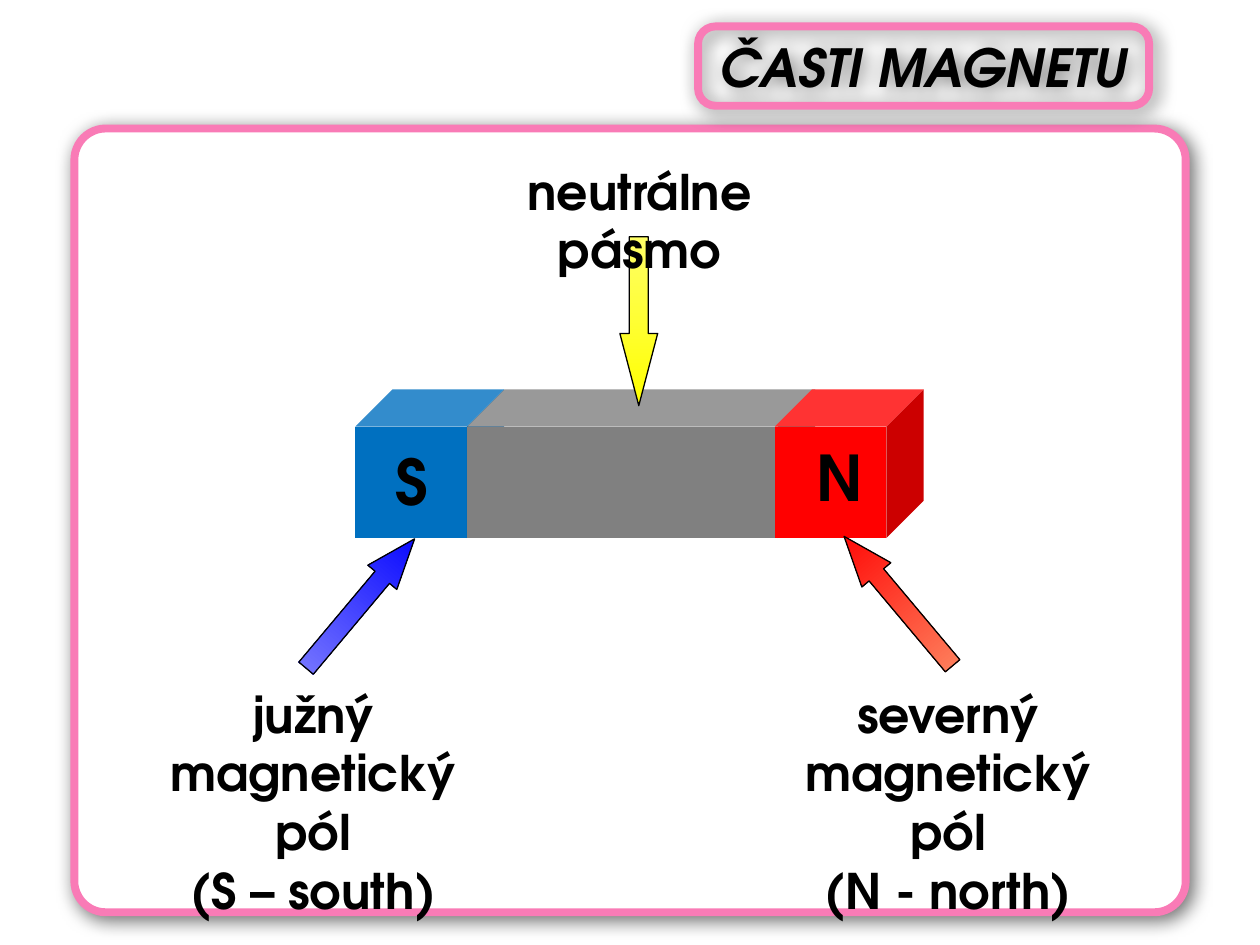
from lxml import etree
from pptx import Presentation
from pptx.dml.color import RGBColor
from pptx.enum.shapes import MSO_SHAPE
from pptx.enum.text import MSO_ANCHOR, MSO_AUTO_SIZE, PP_ALIGN
from pptx.oxml.ns import qn
from pptx.util import Inches, Pt

ROUNDED, CUBE, ARROW = MSO_SHAPE.ROUNDED_RECTANGLE, MSO_SHAPE.CUBE, MSO_SHAPE.UP_ARROW
CENTER, MIDDLE = PP_ALIGN.CENTER, MSO_ANCHOR.MIDDLE
GROW = MSO_AUTO_SIZE.SHAPE_TO_FIT_TEXT


def color(value):
    return RGBColor.from_string(value)


class MagnetSlide:
    """Draws the parts of the magnet on one slide in a shared style."""

    font = "TeX Gyre Adventor"
    ink = "000000"
    border = "F97BB6"

    def __init__(self, slide):
        self.slide = slide

    def shape(self, kind, box, adjustments=()):
        shape = self.slide.shapes.add_shape(kind, *map(Inches, box))
        shape.shadow.inherit = False
        for index, value in enumerate(adjustments):
            shape.adjustments[index] = value
        return shape

    def add_lines(self, frame, lines, size, italic=False):
        for index, line in enumerate(lines):
            paragraph = frame.add_paragraph() if index else frame.paragraphs[0]
            paragraph.alignment = CENTER
            run = paragraph.add_run()
            run.text = line
            run.font.name = self.font
            run.font.size = Pt(size)
            run.font.bold = True
            run.font.italic = italic
            run.font.color.rgb = color(self.ink)

    def panel(self, box, rounding, fill=None):
        panel = self.shape(ROUNDED, box, [rounding])
        if fill:
            panel.fill.solid()
            panel.fill.fore_color.rgb = color(fill)
        else:
            panel.fill.background()
        panel.line.color.rgb = color(self.border)
        panel.line.width = Pt(4.5)
        effects = panel._element.spPr.find(qn("a:effectLst"))
        shadow = etree.SubElement(
            effects, qn("a:outerShdw"), blurRad=str(Pt(11)), dist=str(Pt(3)),
            dir="2700000", algn="tl", rotWithShape="0")
        tint = etree.SubElement(shadow, qn("a:srgbClr"), val=self.ink)
        etree.SubElement(tint, qn("a:alpha"), val="55000")
        return panel

    def title(self, box, text):
        frame = self.panel(box, 0.22).text_frame
        frame.margin_left = frame.margin_right = 0
        frame.margin_top = frame.margin_bottom = 0
        frame.vertical_anchor = MIDDLE
        self.add_lines(frame, [text], 30, italic=True)

    def block(self, left, width, fill):
        block = self.shape(CUBE, (left, 3.09, width, 1.18))
        block.fill.solid()
        block.fill.fore_color.rgb = color(fill)
        block.line.fill.background()

    def arrow(self, left, top, head, tip, tail, rotation=0, flipped=False):
        arrow = self.shape(ARROW, (left, top, 0.3, 1.34), [0.5, head])
        arrow.rotation = rotation
        if flipped:
            arrow._element.spPr.xfrm.set("flipV", "1")
        arrow.fill.gradient()
        arrow.fill.gradient_angle = 270
        for stop, position, shade in zip(arrow.fill.gradient_stops, (0, 1), (tip, tail)):
            stop.position = position
            stop.color.rgb = color(shade)
        arrow.line.color.rgb = color(self.ink)
        arrow.line.width = Pt(0.75)

    def label(self, box, lines, size=28):
        frame = self.slide.shapes.add_textbox(*map(Inches, box)).text_frame
        frame.word_wrap = True
        frame.auto_size = GROW
        self.add_lines(frame, lines, size)


def main():
    deck = Presentation()
    deck.slide_width, deck.slide_height = Inches(10), Inches(7.5)
    magnet = MagnetSlide(deck.slides.add_slide(deck.slide_layouts[6]))

    magnet.panel((0.59, 1.02, 8.82, 6.22), 0.04, "FFFFFF")
    magnet.title((5.54, 0.21, 3.58, 0.63), "ČASTI MAGNETU")

    for left, width, fill in ((2.82, 1.18, "0070C0"), (3.71, 2.76, "808080"),
                              (6.15, 1.18, "FF0000")):
        magnet.block(left, width, fill)
    magnet.label((6.38, 3.43, 0.46, 0.71), ["N"], 36)
    magnet.label((3.04, 3.46, 0.46, 0.71), ["S"], 36)

    magnet.arrow(4.92, 1.88, 1.91, "FFFF00", "FFFF66", flipped=True)
    magnet.arrow(2.71, 4.12, 1.33, "0000FF", "7D7DFF", rotation=40)
    magnet.arrow(6.98, 4.1, 1.33, "FF0000", "FE8762", rotation=320)

    magnet.label((3.59, 1.23, 2.97, 0.57), ["neutrálne pásmo"])
    for left, side, pole in ((1.14, "južný", "(S – south)"),
                             (6.18, "severný", "(N - north)")):
        magnet.label((left, 5.38, 2.69, 1.51), [side, "magnetický pól", pole])

    deck.save("out.pptx")


if __name__ == "__main__":
    main()
